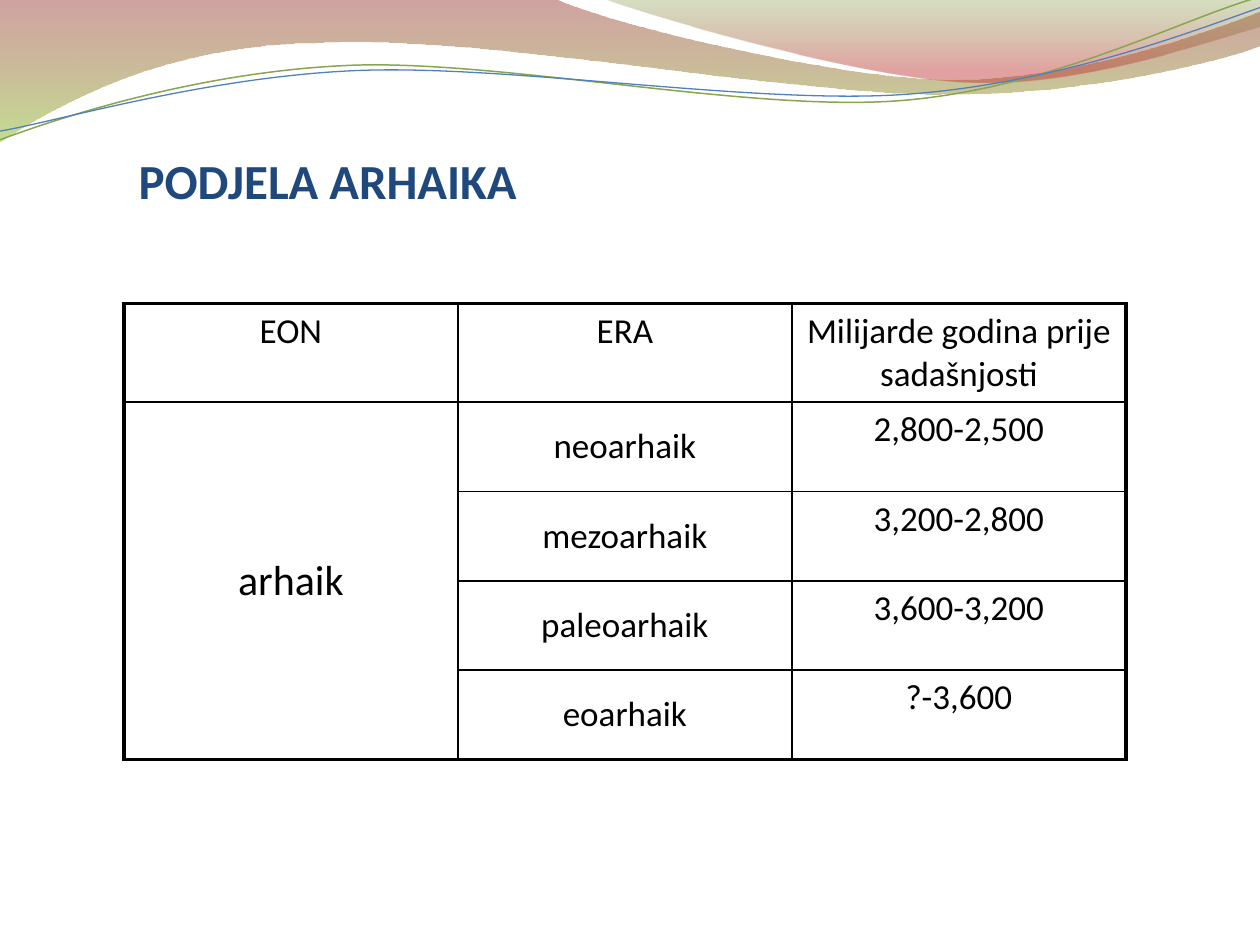
import pptx
import pptx.util
import pptx.dml.color
import pptx.enum.text
import pptx.oxml
import pptx.oxml.ns
from dataclasses import dataclass

Pt = pptx.util.Pt
qn = pptx.oxml.ns.qn
ALIGN = pptx.enum.text.PP_ALIGN
ANCHOR = pptx.enum.text.MSO_ANCHOR


@dataclass(frozen=True)
class Theme:
    font: str = "Calibri"
    title: str = "1F497D"
    text: str = "000000"
    green: str = "89A54F"
    blue: str = "4F81BD"
    band: tuple = ((0, "973330", 45), (1, "95C238", 55))
    crest: tuple = ((0, "769537", 30), (0.8, "BE3330", 45))
    title_size: float = 28
    cell_size: float = 20
    eon_size: float = 24
    outer: float = 2.25
    inner: float = 1


T = Theme()

BAND = [[(0, -0.7)], [(317, -0.7)],
        [(342.7, 12.2), (478, 45.4), (545.8, 45.4)],
        [(614.2, 45.4), (689.8, 18.7), (720, 6.5)],
        [(720.7, 25.9)],
        [(707.8, 31.7), (626.4, 54.7), (537.1, 54)],
        [(447.8, 54), (275, 20.2), (185, 24.5)],
        [(92.9, 25.2), (33.1, 59.8), (-0.7, 81.4)]]
CREST = [[(344.9, -0.7)],
         [(366.5, 7.9), (491, 44.6), (553.7, 46.8)],
         [(616.3, 49.7), (691.9, 23), (720, 15.1)],
         [(720, 0)]]
GREEN_LINE = [[(0, 79.9)],
              [(34.6, 67), (113.8, 41), (199.4, 37.4)],
              [(284.4, 33.8), (427, 64.1), (513.4, 57.6)],
              [(599.8, 51.1), (675.4, 10.8), (718.6, -1.4)]]
BLUE_LINE = [[(0, 74.9)],
             [(33.8, 69.1), (118.1, 43.9), (203.8, 40.3)],
             [(290.2, 36.7), (429.8, 59.8), (516.2, 54)],
             [(601.9, 48.2), (677.5, 19.4), (720, 4.3)]]

ROWS = [("EON", "ERA", "Milijarde godina prije sadašnjosti"),
        ("arhaik", "neoarhaik", "2,800-2,500"),
        ("", "mezoarhaik", "3,200-2,800"),
        ("", "paleoarhaik", "3,600-3,200"),
        ("", "eoarhaik", "?-3,600")]


def rgb(color):
    return pptx.dml.color.RGBColor.from_string(color)


def write(tf, text, size=T.cell_size, color=T.text, bold=False, align=ALIGN.CENTER):
    p = tf.paragraphs[0]
    p.alignment = align
    r = p.add_run()
    r.text = text
    r.font.name, r.font.size, r.font.bold = T.font, Pt(size), bold
    r.font.color.rgb = rgb(color)


def add_curve(s, box, segments, close):
    x, y = box[:2]
    points = [(Pt(x + px), Pt(y + py)) for segment in segments for px, py in segment]
    builder = s.shapes.build_freeform(*points[0])
    builder.add_line_segments(points[1:], close=close)
    sp = builder.convert_to_shape()
    sp.shadow.inherit = False
    steps = iter(list(sp._element.iter(qn("a:lnTo"))))
    for segment in segments[1:]:
        group = [next(steps) for _ in segment]
        if len(group) == 3:
            curve = pptx.oxml.parse_xml(f'<a:cubicBezTo {pptx.oxml.ns.nsdecls("a")}/>')
            group[0].addprevious(curve)
            for step in group:
                curve.append(step[0])
                step.getparent().remove(step)
    return sp


def add_waves(s, box):
    for segments, stops in ((BAND, T.band), (CREST, T.crest)):
        sp = add_curve(s, box, segments, True)
        sp.line.fill.background()
        sp.fill.gradient()
        sp.fill.gradient_angle = 270
        for stop, (position, color, _) in zip(sp.fill.gradient_stops, stops):
            stop.position = position
            stop.color.rgb = rgb(color)
        for clr, (_, _, opacity) in zip(sp._element.spPr.iter(qn("a:srgbClr")), stops):
            clr.append(pptx.oxml.parse_xml(
                f'<a:alpha {pptx.oxml.ns.nsdecls("a")} val="{opacity * 1000}"/>'))
    for segments, color, width in ((GREEN_LINE, T.green, 0.85), (BLUE_LINE, T.blue, 0.75)):
        sp = add_curve(s, box, segments, False)
        sp.fill.background()
        sp.line.color.rgb = rgb(color)
        sp.line.width = Pt(width)


def add_title(s, box, text):
    sp = s.shapes.title
    sp.left, sp.top, sp.width, sp.height = map(Pt, box)
    tf = sp.text_frame
    tf.word_wrap = True
    tf.vertical_anchor = ANCHOR.BOTTOM
    tf.margin_left = tf.margin_right = tf.margin_bottom = 0
    tf.margin_top = Pt(3.6)
    write(tf, text, size=T.title_size, color=T.title, bold=True, align=ALIGN.LEFT)


def set_borders(cell, outer_sides):
    tcPr = cell._tc.get_or_add_tcPr()
    for i, side in enumerate("LRTB"):
        width = Pt(T.outer if side in outer_sides else T.inner)
        tcPr.insert(i, pptx.oxml.parse_xml(
            f'<a:ln{side} {pptx.oxml.ns.nsdecls("a")} w="{width}"><a:solidFill>'
            f'<a:srgbClr val="{T.text}"/></a:solidFill></a:ln{side}>'))


def add_era_table(s, box, rows, header_height):
    n_rows, n_cols = len(rows), len(rows[0])
    table = s.shapes.add_table(n_rows, n_cols, *map(Pt, box)).table
    table.first_row = table.horz_banding = False
    for column in table.columns:
        column.width = Pt(box[2] / n_cols)
    for i, row in enumerate(table.rows):
        row.height = Pt((box[3] - header_height) / (n_rows - 1) if i else header_height)
    table.cell(1, 0).merge(table.cell(n_rows - 1, 0))
    for i, values in enumerate(rows):
        for j, text in enumerate(values):
            cell = table.cell(i, j)
            cell.fill.background()
            if cell.is_spanned:
                continue
            last = i + (cell.span_height if cell.is_merge_origin else 1) == n_rows
            edges = {"L": j == 0, "R": j == n_cols - 1, "T": i == 0, "B": last}
            set_borders(cell, [side for side, outer in edges.items() if outer])
            cell.vertical_anchor = ANCHOR.MIDDLE if i and j < 2 else ANCHOR.TOP
            write(cell.text_frame, text,
                  size=T.eon_size if cell.is_merge_origin else T.cell_size)


def main():
    prs = pptx.Presentation()
    prs.slide_width, prs.slide_height = Pt(720), Pt(540)
    s = prs.slides.add_slide(prs.slide_layouts[5])
    add_waves(s, (0, 0, 720, 82))
    add_title(s, (79.2, 65.5, 343.4, 54), "PODJELA ARHAIKA")
    add_era_table(s, (70.8, 173.5, 572.6, 260), ROWS, 55.6)
    prs.save("out.pptx")


if __name__ == "__main__":
    main()
